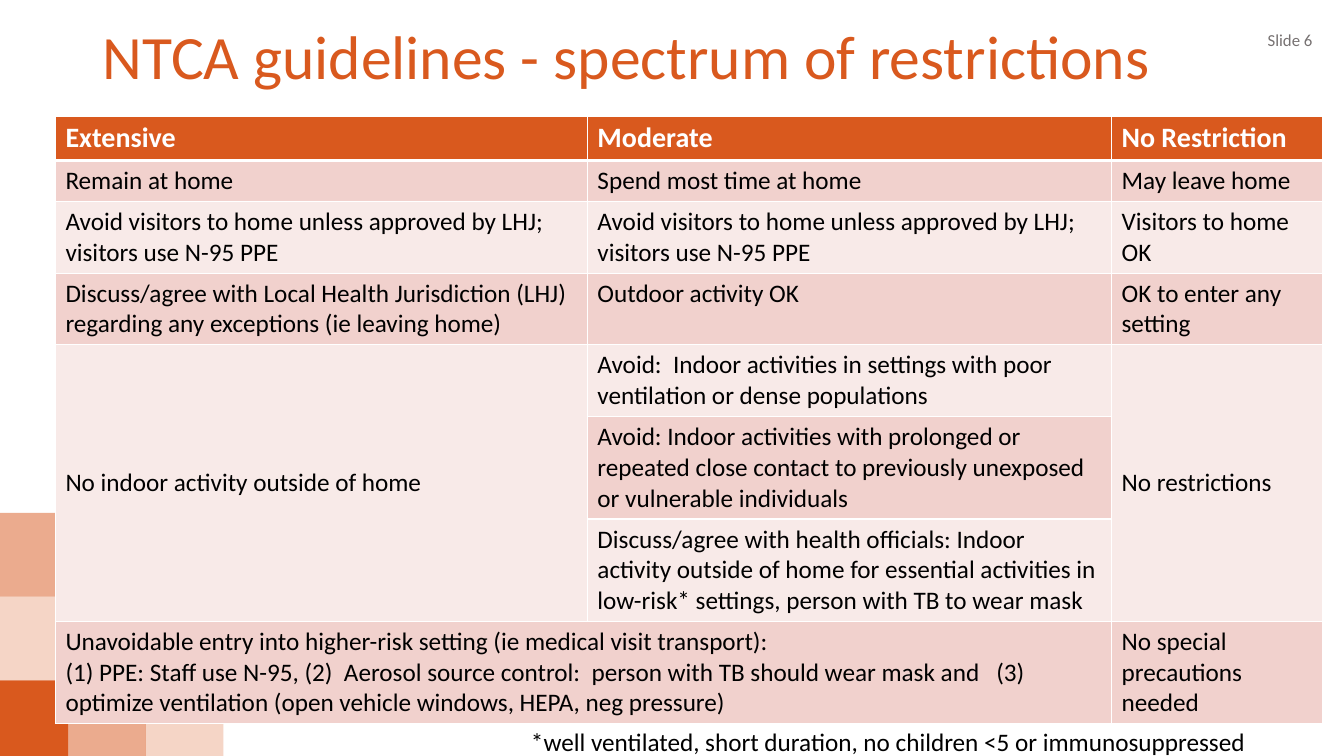
"""Build the slide on the NTCA spectrum of isolation restrictions."""
from lxml.etree import SubElement
from pptx import Presentation
from pptx.dml.color import RGBColor
from pptx.enum.shapes import MSO_SHAPE
from pptx.enum.text import MSO_ANCHOR, PP_ALIGN
from pptx.oxml.ns import qn
from pptx.util import Pt

ORANGE = RGBColor(0xD9, 0x59, 0x1E)
ROSE = RGBColor(0xF1, 0xD1, 0xCD)
PALE_ROSE = RGBColor(0xF8, 0xEA, 0xE8)
WHITE = RGBColor(0xFF, 0xFF, 0xFF)
BLACK = RGBColor(0, 0, 0)
GREY = RGBColor(0x76, 0x71, 0x71)
FONT = "Calibri"

TITLE = "NTCA guidelines - spectrum of restrictions"
SLIDE_LABEL = "Slide 6"
FOOTNOTE = "*well ventilated, short duration, no children <5 or immunosuppressed"
VISITORS = "Avoid visitors to home unless approved by LHJ; visitors use N-95 PPE"
RESTRICTIONS = [
    ("Extensive", "Moderate", "No Restriction"),
    ("Remain at home", "Spend most time at home", "May leave home"),
    (VISITORS, VISITORS, "Visitors to home OK"),
    ("Discuss/agree with Local Health Jurisdiction (LHJ) regarding any "
     "exceptions (ie leaving home)", "Outdoor activity OK", "OK to enter any setting"),
    ("No indoor activity outside of home",
     "Avoid:  Indoor activities in settings with poor ventilation or dense populations",
     "No restrictions"),
    ("", "Avoid: Indoor activities with prolonged or repeated close contact to "
     "previously unexposed or vulnerable individuals", ""),
    ("", "Discuss/agree with health officials: Indoor activity outside of home for "
     "essential activities in low-risk* settings, person with TB to wear mask", ""),
    ("Unavoidable entry into higher-risk setting (ie medical visit transport):\n"
     "(1) PPE: Staff use N-95, (2)  Aerosol source control:  person with TB should "
     "wear mask and   (3) optimize ventilation (open vehicle windows, HEPA, neg pressure)",
     "", "No special precautions needed"),
]
MERGES = [((4, 0), (6, 0)), ((4, 2), (6, 2)), ((7, 0), (7, 1))]
COLUMN_WIDTHS = (380, 374.4, 151)
LINES_PER_ROW = (1, 1, 2, 2, 2, 3, 3, 3)
LINE_HEIGHT, CELL_PADDING = 22, 7.2

SQUARES = [(0, 0, 100), (1, 0, 50), (0, 1, 25), (2, 0, 25), (0, 2, 50)]
SQUARE_WIDTH, SQUARE_HEIGHT = 55.4, 59.8
SQUARES_LEFT, SQUARES_TOP = -6.5, 486


def style(paragraph, size, color, bold=False):
    font = paragraph.font
    font.name, font.size, font.bold = FONT, Pt(size), bold
    font.color.rgb = color


def add_square(slide, column, level, opacity):
    square = slide.shapes.add_shape(
        MSO_SHAPE.RECTANGLE, Pt(SQUARES_LEFT + column * SQUARE_WIDTH),
        Pt(SQUARES_TOP - level * SQUARE_HEIGHT), Pt(SQUARE_WIDTH), Pt(SQUARE_HEIGHT))
    square.shadow.inherit = False
    square.line.fill.background()
    square.fill.solid()
    square.fill.fore_color.rgb = ORANGE
    if opacity < 100:
        color = square.fill._xPr.find(".//" + qn("a:srgbClr"))
        SubElement(color, qn("a:alpha"), val=str(opacity * 1000))


def add_label(slide, text, box, size, color, align, anchor):
    label = slide.shapes.add_textbox(*map(Pt, box))
    frame = label.text_frame
    frame.word_wrap = True
    frame.vertical_anchor = anchor
    frame.text = text
    frame.paragraphs[0].alignment = align
    style(frame.paragraphs[0], size, color)


def add_borders(cell, row):
    heavy_side = {0: "lnB", 1: "lnT"}.get(row)
    for side in ("lnL", "lnR", "lnT", "lnB"):
        width = Pt(3 if side == heavy_side else 1)
        border = SubElement(cell._tc.get_or_add_tcPr(), qn("a:" + side), w=str(width))
        fill = SubElement(border, qn("a:solidFill"))
        SubElement(fill, qn("a:srgbClr"), val=str(WHITE))


def add_restrictions(slide):
    heights = [lines * LINE_HEIGHT + CELL_PADDING for lines in LINES_PER_ROW]
    heights[0] += 2
    table = slide.shapes.add_table(
        len(RESTRICTIONS), len(COLUMN_WIDTHS), Pt(39.6), Pt(83),
        Pt(sum(COLUMN_WIDTHS)), Pt(sum(heights))).table
    for column, width in zip(table.columns, COLUMN_WIDTHS):
        column.width = Pt(width)
    for r, texts in enumerate(RESTRICTIONS):
        table.rows[r].height = Pt(heights[r])
        for c, text in enumerate(texts):
            cell = table.cell(r, c)
            add_borders(cell, r)
            cell.fill.solid()
            cell.fill.fore_color.rgb = ORANGE if r == 0 else ROSE if r % 2 else PALE_ROSE
            cell.text = text
            for paragraph in cell.text_frame.paragraphs:
                style(paragraph, 18 if r else 20, BLACK if r else WHITE, r == 0)
    for first, last in MERGES:
        table.cell(*first).merge(table.cell(*last))
        if last[0] > first[0]:
            table.cell(*first).vertical_anchor = MSO_ANCHOR.MIDDLE


def main():
    deck = Presentation()
    deck.slide_width, deck.slide_height = Pt(960), Pt(540)
    slide = deck.slides.add_slide(deck.slide_layouts[5])
    for square in SQUARES:
        add_square(slide, *square)

    title = slide.shapes.title
    title.left, title.top, title.width, title.height = map(Pt, (66, 13.7, 828, 58.3))
    title.text_frame.text = TITLE
    title.text_frame.vertical_anchor = MSO_ANCHOR.MIDDLE
    heading = title.text_frame.paragraphs[0]
    heading.alignment, heading.line_spacing = PP_ALIGN.LEFT, 0.9
    style(heading, 44, ORANGE)

    add_restrictions(slide)
    add_label(slide, SLIDE_LABEL, (728.6, 14.4, 216, 28.8), 12, GREY,
              PP_ALIGN.RIGHT, MSO_ANCHOR.MIDDLE)
    add_label(slide, FOOTNOTE, (372.2, 515.5, 580, 29), 18, BLACK,
              PP_ALIGN.LEFT, MSO_ANCHOR.TOP)
    deck.save("out.pptx")


if __name__ == "__main__":
    main()
